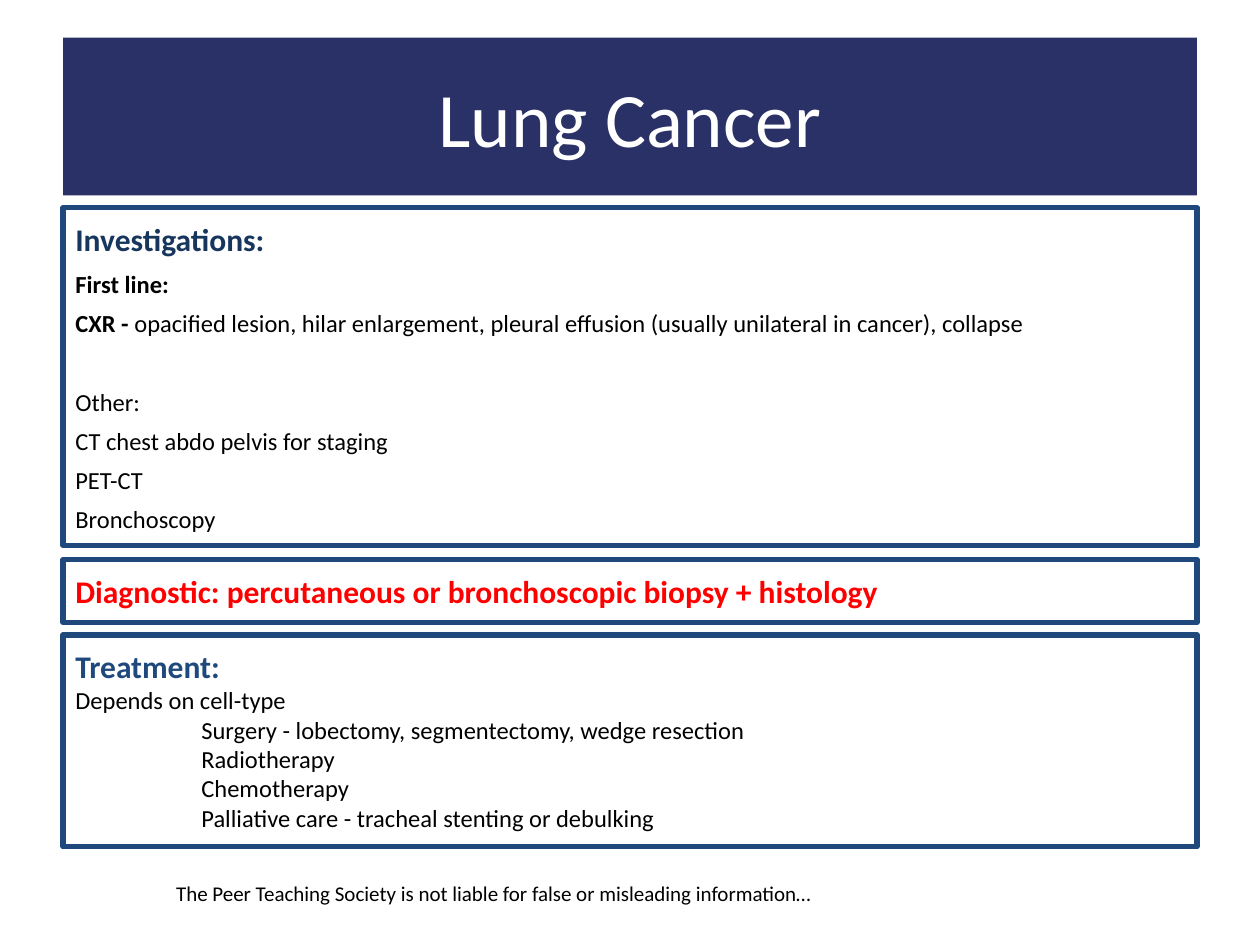
from dataclasses import dataclass

from pptx import Presentation
from pptx.dml.color import RGBColor
from pptx.enum import shapes, text
from pptx.util import Cm, Pt


@dataclass(frozen=True)
class Theme:
    font: str = "Calibri"
    banner: str = "293167"
    border: str = "1F497D"
    navy: str = "17365D"
    alert: str = "FF0000"
    body: str = "000000"
    white: str = "FFFFFF"
    title_size: int = 44
    heading_size: int = 18
    body_size: int = 14
    footer_size: int = 12


THEME = Theme()
LEFT, WIDTH = Cm(1.27), Cm(22.86)
INSET = Cm(0.25)
LIST_INDENT = Cm(2.54)


def set_insets(frame, horizontal=INSET, vertical=INSET):
    frame.margin_left = frame.margin_right = horizontal
    frame.margin_top = frame.margin_bottom = vertical
    frame.word_wrap = True


def style_run(run, size, color, bold=False):
    run.font.name = THEME.font
    run.font.size = Pt(size)
    run.font.bold = bold
    run.font.color.rgb = RGBColor.from_string(color)


def set_title(slide, wording):
    title = slide.shapes.title
    title.left, title.top, title.width, title.height = LEFT, Cm(0.76), WIDTH, Cm(3.18)
    title.fill.solid()
    title.fill.fore_color.rgb = RGBColor.from_string(THEME.banner)
    frame = title.text_frame
    set_insets(frame)
    frame.vertical_anchor = text.MSO_ANCHOR.MIDDLE
    frame.text = wording
    frame.paragraphs[0].alignment = text.PP_ALIGN.CENTER
    style_run(frame.paragraphs[0].runs[0], THEME.title_size, THEME.white)


def add_panel(slide, top, height, heading, color):
    """Add a bordered box with a bold heading and return its text frame."""
    panel = slide.shapes.add_shape(
        shapes.MSO_SHAPE.RECTANGLE, LEFT, top, WIDTH, height)
    panel.shadow.inherit = False
    panel.fill.background()
    panel.line.color.rgb = RGBColor.from_string(THEME.border)
    panel.line.width = Pt(3)
    frame = panel.text_frame
    set_insets(frame)
    frame.vertical_anchor = text.MSO_ANCHOR.TOP
    frame.text = heading
    frame.paragraphs[0].alignment = text.PP_ALIGN.LEFT
    style_run(frame.paragraphs[0].runs[0], THEME.heading_size, color, bold=True)
    return frame


def add_line(frame, wording, lead="", space_before=0, indent=0):
    """Add a body paragraph, opened by an optional bold lead."""
    paragraph = frame.add_paragraph()
    paragraph.alignment = text.PP_ALIGN.LEFT
    paragraph.space_before = Pt(space_before)
    if indent:
        paragraph._p.get_or_add_pPr().set("marL", str(int(indent)))
    for part, bold in ((lead, True), (wording, False)):
        if part:
            run = paragraph.add_run()
            run.text = part
            style_run(run, THEME.body_size, THEME.body, bold)


def add_footer(slide, wording):
    footer = slide.shapes.add_textbox(Cm(3.3), Cm(17.63), Cm(14.07), Cm(0.76))
    frame = footer.text_frame
    set_insets(frame, vertical=Cm(0.13))
    frame.text = wording
    style_run(frame.paragraphs[0].runs[0], THEME.footer_size, THEME.body)


def main():
    deck = Presentation()
    deck.slide_width, deck.slide_height = Cm(25.4), Cm(19.05)
    slide = deck.slides.add_slide(deck.slide_layouts[5])

    add_footer(slide, "The Peer Teaching Society is not liable for false "
                      "or misleading information…")
    set_title(slide, "Lung Cancer")

    investigations = add_panel(slide, Cm(4.19), Cm(6.81), "Investigations:", THEME.navy)
    add_line(investigations, "", lead="First line:", space_before=6)
    add_line(investigations,
             " opacified lesion, hilar enlargement, pleural effusion "
             "(usually unilateral in cancer), collapse",
             lead="CXR -", space_before=5.6)
    add_line(investigations, "Other:", space_before=28.3)
    for test in ("CT chest abdo pelvis for staging", "PET-CT", "Bronchoscopy"):
        add_line(investigations, test, space_before=5.6)

    add_panel(slide, Cm(11.28), Cm(1.27),
              "Diagnostic: percutaneous or bronchoscopic biopsy + histology",
              THEME.alert)

    treatment = add_panel(slide, Cm(12.8), Cm(4.27), "Treatment:", THEME.border)
    add_line(treatment, "Depends on cell-type")
    for option in ("Surgery - lobectomy, segmentectomy, wedge resection",
                   "Radiotherapy",
                   "Chemotherapy",
                   "Palliative care - tracheal stenting or debulking"):
        add_line(treatment, option, indent=LIST_INDENT)

    deck.save("out.pptx")


if __name__ == "__main__":
    main()
